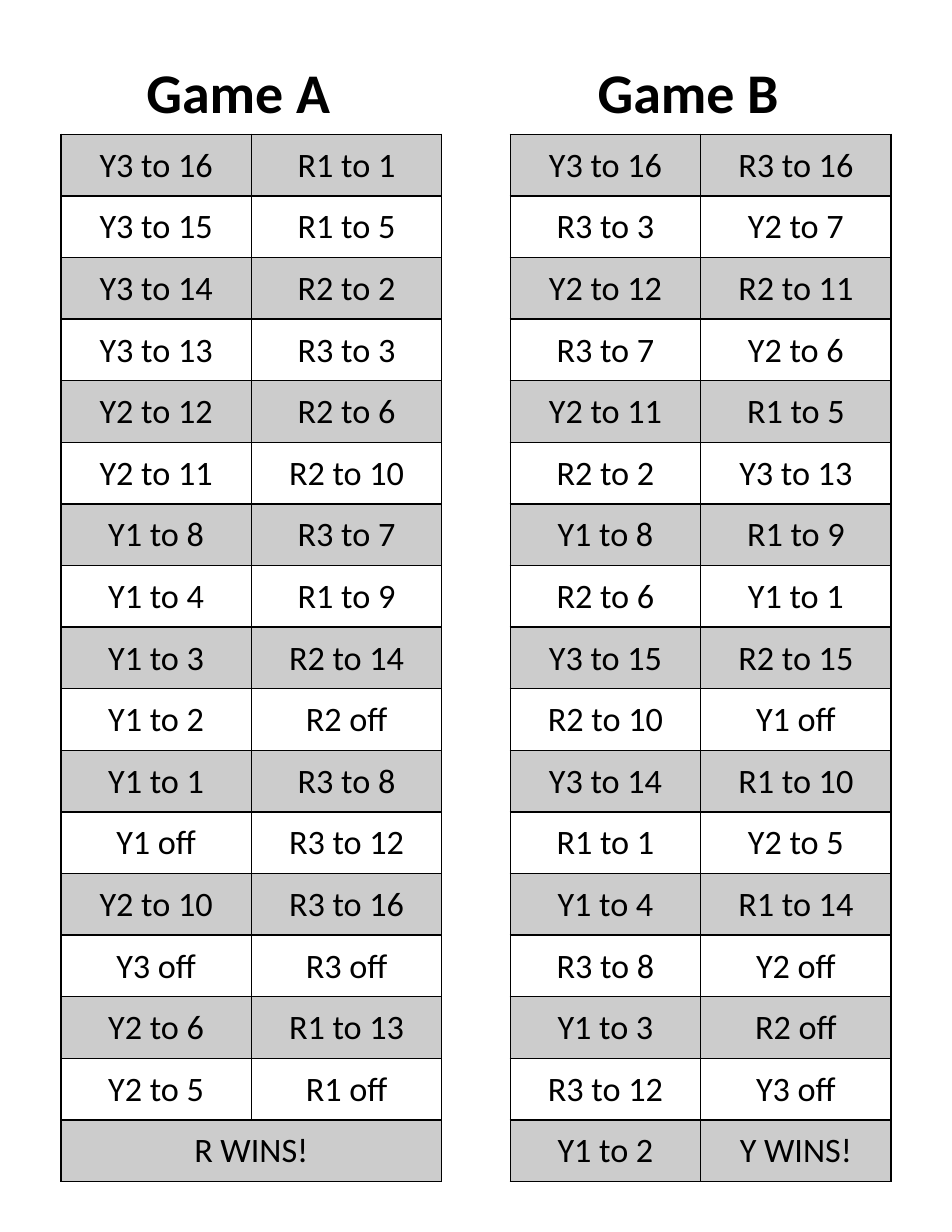
from lxml.etree import SubElement as Sub
from pptx import Presentation
from pptx.dml.color import RGBColor as Rgb
from pptx.enum.text import MSO_ANCHOR as Anchor, MSO_AUTO_SIZE as Auto, PP_ALIGN as Align
from pptx.oxml import parse_xml
from pptx.oxml.ns import nsdecls, qn
from pptx.util import Inches, Pt

HEX = {"ink": "000000"}
FONT = "Calibri"
COLS, ROWS = 5, 20  # slide grid: a cell of it is a cell of the tables

GAMES = [
    ("Game A", 0.32, 0.71, [
        "Y3 to 16, R1 to 1", "Y3 to 15, R1 to 5", "Y3 to 14, R2 to 2",
        "Y3 to 13, R3 to 3", "Y2 to 12, R2 to 6", "Y2 to 11, R2 to 10",
        "Y1 to 8, R3 to 7", "Y1 to 4, R1 to 9", "Y1 to 3, R2 to 14",
        "Y1 to 2, R2 off", "Y1 to 1, R3 to 8", "Y1 off, R3 to 12",
        "Y2 to 10, R3 to 16", "Y3 off, R3 off", "Y2 to 6, R1 to 13",
        "Y2 to 5, R1 off", "R WINS!"]),
    ("Game B", 2.68, 3.08, [
        "Y3 to 16, R3 to 16", "R3 to 3, Y2 to 7", "Y2 to 12, R2 to 11",
        "R3 to 7, Y2 to 6", "Y2 to 11, R1 to 5", "R2 to 2, Y3 to 13",
        "Y1 to 8, R1 to 9", "R2 to 6, Y1 to 1", "Y3 to 15, R2 to 15",
        "R2 to 10, Y1 off", "Y3 to 14, R1 to 10", "R1 to 1, Y2 to 5",
        "Y1 to 4, R1 to 14", "R3 to 8, Y2 off", "Y1 to 3, R2 off",
        "R3 to 12, Y3 off", "Y1 to 2, Y WINS!"]),
]


class Sheet:
    def __init__(self, deck, slide):
        self.slide = slide
        self.col = deck.slide_width / COLS
        self.row = deck.slide_height / ROWS

    def box(self, x, y, w, h):
        return [round(n) for n in (x * self.col, y * self.row, w * self.col, h * self.row)]

    def style(self, par, size, bold, align):
        par.alignment = align
        for run in par.runs:
            font = run.font
            font.name, font.size, font.bold = FONT, Pt(size), bold
            font.color.rgb = Rgb.from_string(HEX["ink"])

    def head(self, holder, text, x, y):
        holder.left, holder.top, holder.width, holder.height = self.box(x, y, 1.21, 1.29)
        frame = holder.text_frame
        frame.text = text
        frame.word_wrap, frame.auto_size = True, Auto.NONE
        frame.vertical_anchor = Anchor.TOP
        par = frame.paragraphs[0]
        par.space_before = Pt(0)
        self.style(par, 36, True, Align.LEFT)

    def table(self, moves, x, y):
        count = len(moves)
        shape = self.slide.shapes.add_table(count, 2, *self.box(x, y, 2, count))
        table = shape.table
        table.first_row = table.horz_banding = False
        for r, line in enumerate(moves):
            texts = line.split(", ")
            for c in range(2):
                self.cell(table.cell(r, c), texts[c] if c < len(texts) else "", r % 2 == 0)
            if len(texts) == 1:
                table.cell(r, 0).merge(table.cell(r, 1))

    def cell(self, cell, text, shade):
        cell.text = text
        cell.vertical_anchor = Anchor.MIDDLE
        cell.margin_left = cell.margin_right = cell.margin_top = Inches(0.01)
        cell.margin_bottom = 0
        self.style(cell.text_frame.paragraphs[0], 22, False, Align.CENTER)
        props = cell._tc.get_or_add_tcPr()
        # Shaded rows are black at 20 % opacity
        if shade:
            cell.fill.solid()
            cell.fill.fore_color.rgb = Rgb.from_string(HEX["ink"])
            Sub(props.find(".//" + qn("a:srgbClr")), qn("a:alpha"), val="20000")
        else:
            cell.fill.background()
        # Borders come before the fill
        for i, side in enumerate("LRTB"):
            props.insert(i, parse_xml(
                f'<a:ln{side} {nsdecls("a")} w="{Pt(1)}"><a:solidFill>'
                f'<a:srgbClr val="{HEX["ink"]}"/></a:solidFill></a:ln{side}>'))


def main():
    deck = Presentation()
    deck.slide_width, deck.slide_height = Inches(8.5), Inches(11)

    # Comparison layout: keep its two heading placeholders only
    slide = deck.slides.add_slide(deck.slide_layouts[4])
    spots = {p.placeholder_format.idx: p for p in slide.placeholders}
    for idx in (0, 2, 4, 10, 11, 12):
        if idx in spots:
            spots[idx].element.getparent().remove(spots[idx].element)

    # One heading and one table of moves per game
    sheet = Sheet(deck, slide)
    for idx, (name, left, indent, moves) in zip((1, 3), GAMES):
        sheet.table(moves, left, 2.18)
        sheet.head(spots[idx], name, indent, 0.84)

    deck.save("out.pptx")


if __name__ == "__main__":
    main()
